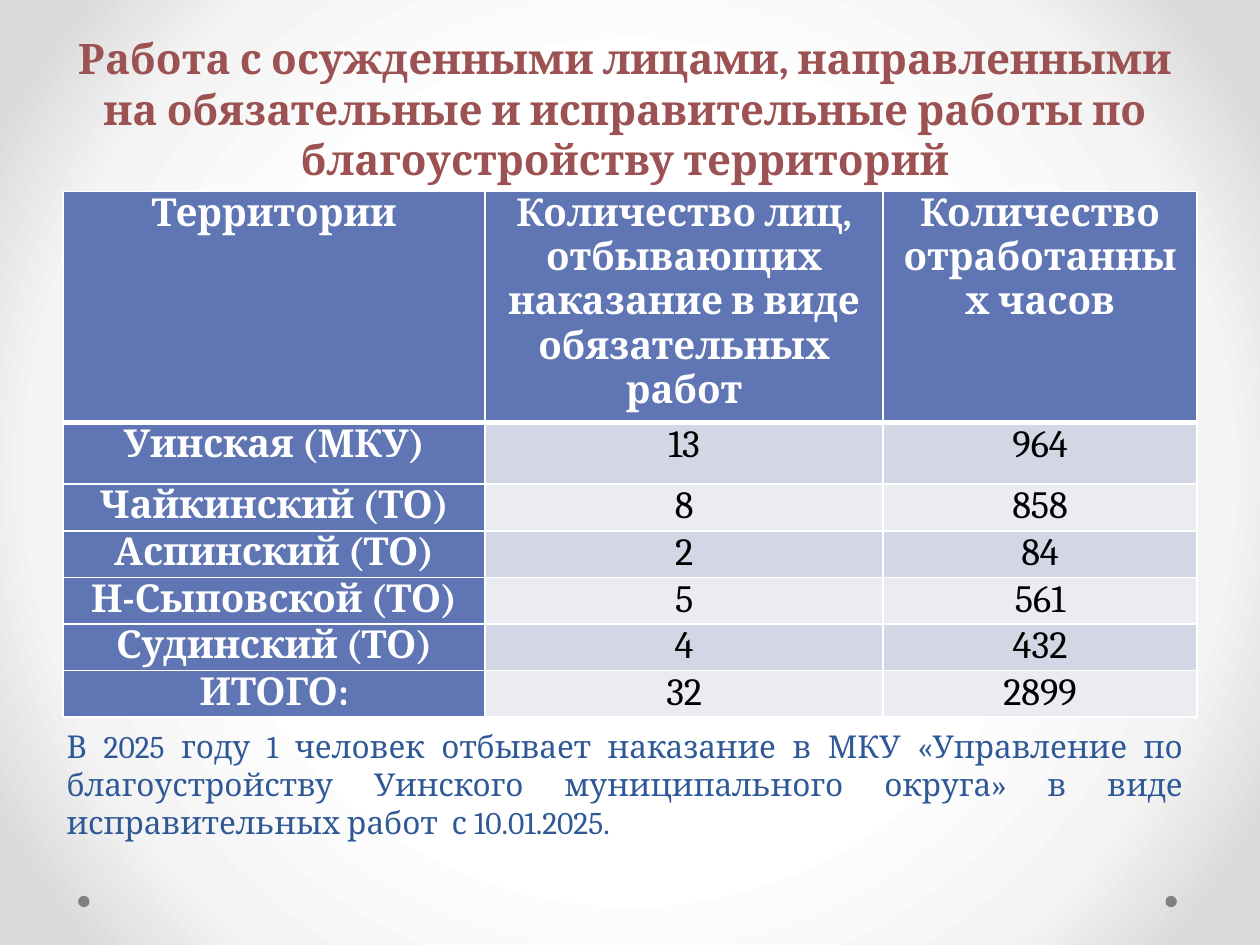
from dataclasses import dataclass

import lxml.etree
import pptx
import pptx.dml.color
import pptx.enum.shapes
import pptx.enum.text
import pptx.oxml
import pptx.oxml.ns
import pptx.util

Inches = pptx.util.Inches
Pt = pptx.util.Pt
RGB = pptx.dml.color.RGBColor.from_string
ALIGN = pptx.enum.text.PP_ALIGN
qn = pptx.oxml.ns.qn


@dataclass(frozen=True)
class Theme:
    font: str = "Cambria"
    title_color: str = "9C5252"
    note_color: str = "2F5897"
    header_fill: str = "6076B4"
    bands: tuple = ("D2D6E5", "EAECF2")
    white: str = "FFFFFF"
    black: str = "000000"
    dot: str = "808080"
    backdrop: tuple = ((50, "FFFFFF"), (76, "F4F4F4"), (92, "DADADA"))
    title_size: int = 24
    table_size: int = 22
    note_size: int = 18


theme = Theme()


def write(frame, text, size, color, bold=False, align=ALIGN.CENTER):
    frame.word_wrap = True
    paragraph = frame.paragraphs[0]
    paragraph.text = text
    paragraph.alignment = align
    paragraph.font.name = theme.font
    paragraph.font.size = Pt(size)
    paragraph.font.bold = bold
    paragraph.font.color.rgb = RGB(color)


def set_borders(cell, widths):
    properties = cell._tc.get_or_add_tcPr()
    for position, (side, width) in enumerate(widths.items()):
        line = lxml.etree.Element(qn(f"a:ln{side}"), w=str(Pt(width)))
        solid = lxml.etree.SubElement(line, qn("a:solidFill"))
        lxml.etree.SubElement(solid, qn("a:srgbClr"), val=theme.white)
        properties.insert(position, line)


presentation = pptx.Presentation()
presentation.slide_width = Inches(10)
presentation.slide_height = Inches(7.5)
slide = presentation.slides.add_slide(presentation.slide_layouts[6])

# Radial background
stops = "".join(
    f'<a:gs pos="{position * 1000}"><a:srgbClr val="{color}"/></a:gs>'
    for position, color in theme.backdrop
)
background = pptx.oxml.parse_xml(
    f'<p:bg {pptx.oxml.ns.nsdecls("p", "a")}><p:bgPr><a:gradFill rotWithShape="1">'
    f'<a:gsLst>{stops}</a:gsLst><a:path path="circle">'
    '<a:fillToRect l="50000" t="50000" r="50000" b="50000"/></a:path>'
    "</a:gradFill><a:effectLst/></p:bgPr></p:bg>"
)
slide.element.cSld.insert(0, background)

# Footer dots
for left in (9.25, 0.62):
    dot = slide.shapes.add_shape(
        pptx.enum.shapes.MSO_SHAPE.OVAL,
        Inches(left), Inches(7.11), Inches(0.09), Inches(0.09),
    )
    dot.shadow.inherit = False
    dot.fill.solid()
    dot.fill.fore_color.rgb = RGB(theme.dot)
    dot.line.fill.background()

# Title
title = slide.shapes.add_textbox(Inches(0.43), Inches(0.21), Inches(9.06), Inches(1.31))
write(
    title.text_frame,
    "Работа с осужденными лицами, направленными на обязательные "
    "и исправительные работы по благоустройству территорий",
    theme.title_size, theme.title_color, bold=True,
)

# Table of territories
records = [
    ("Территории", "Количество лиц, отбывающих наказание в виде обязательных работ",
     "Количество отработанных часов"),
    ("Уинская (МКУ)", "13", "964"),
    ("Чайкинский (ТО)", "8", "858"),
    ("Аспинский (ТО)", "2", "84"),
    ("Н-Сыповской (ТО)", "5", "561"),
    ("Судинский (ТО)", "4", "432"),
    ("ИТОГО:", "32", "2899"),
]
column_widths = [3.35, 3.16, 2.49]
row_heights = [1.82, 0.49] + [0.37] * 5

territories = slide.shapes.add_table(
    len(records), len(column_widths),
    Inches(0.5), Inches(1.52), Inches(9), Inches(4.16),
).table
territories.first_col = True
for column, width in zip(territories.columns, column_widths):
    column.width = Inches(width)

for r, (record, height) in enumerate(zip(records, row_heights)):
    territories.rows[r].height = Inches(height)
    for c, text in enumerate(record):
        cell = territories.cell(r, c)
        heading = r == 0 or c == 0
        cell.margin_left = cell.margin_right = Inches(0.07)
        cell.margin_top = cell.margin_bottom = 0
        cell.fill.solid()
        cell.fill.fore_color.rgb = RGB(
            theme.header_fill if heading else theme.bands[(r - 1) % 2]
        )
        set_borders(cell, {"L": 1, "R": 1, "T": 3 if r == 1 else 1, "B": 3 if r == 0 else 1})
        write(cell.text_frame, text, theme.table_size,
              theme.white if heading else theme.black, bold=heading)

# Note under the table
note = slide.shapes.add_textbox(Inches(0.43), Inches(5.72), Inches(9.06), Inches(1.01))
write(
    note.text_frame,
    "В 2025 году 1 человек отбывает наказание в МКУ «Управление по благоустройству "
    "Уинского муниципального округа» в виде исправительных работ  с 10.01.2025.",
    theme.note_size, theme.note_color, align=ALIGN.JUSTIFY,
)

presentation.save("out.pptx")
